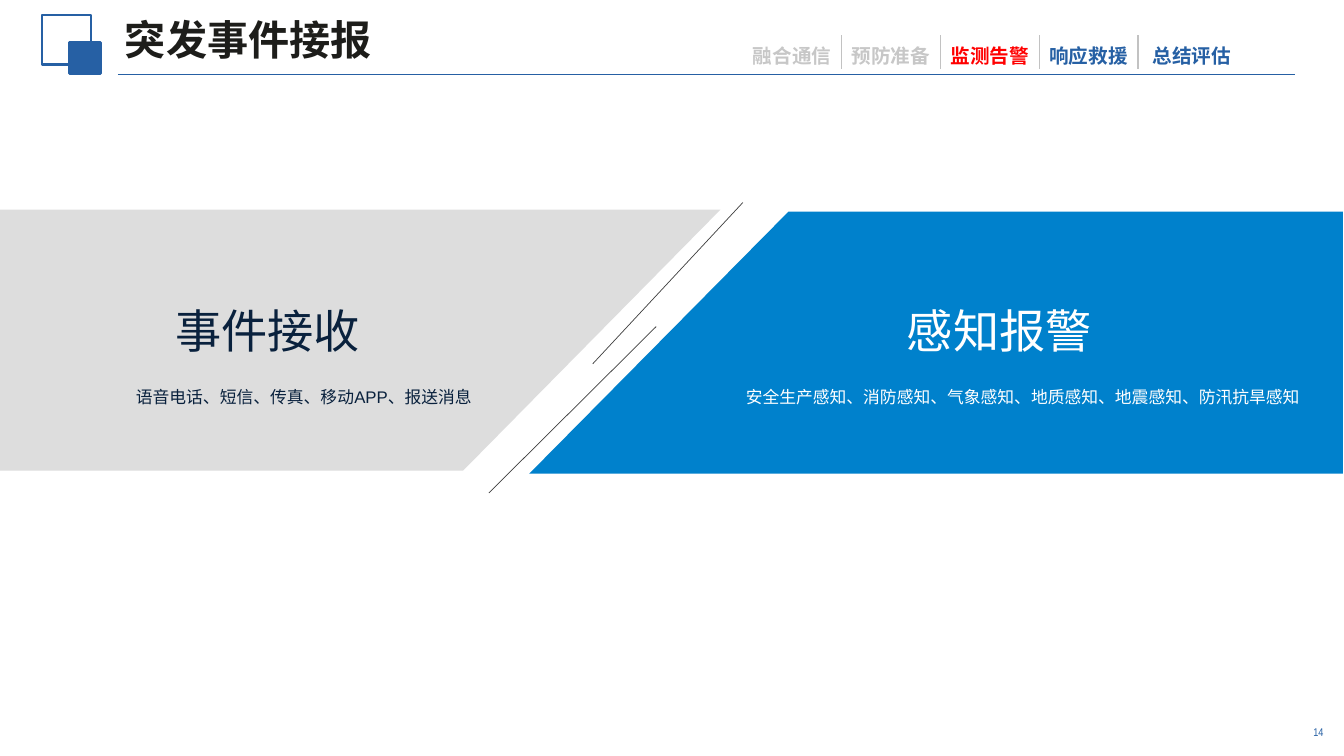
from lxml import etree
from pptx import Presentation
from pptx.dml.color import RGBColor
from pptx.enum import shapes, text
from pptx.oxml import ns
from pptx.util import Pt

BLUE = RGBColor(0x26, 0x60, 0xA4)
SKY = RGBColor(0x00, 0x81, 0xCC)
NAVY = RGBColor(0x09, 0x21, 0x3D)
INK = RGBColor(0x1D, 0x1D, 0x1A)
CHARCOAL = RGBColor(0x40, 0x40, 0x40)
RED = RGBColor(0xFF, 0x00, 0x00)
FADED = RGBColor(0xC7, 0xC7, 0xC7)
RULE = RGBColor(0xC2, 0xC2, 0xC2)
SILVER = RGBColor(0xDD, 0xDD, 0xDD)
WHITE = RGBColor(0xFF, 0xFF, 0xFF)
CJK = "Noto Sans CJK SC"

TITLE = "突发事件接报"
STAGES = [
    ("融合通信", FADED, 70.56),
    ("预防准备", FADED, 70.56),
    ("监测告警", RED, 70.56),
    ("响应救援", BLUE, 70.56),
    ("总结评估", BLUE, 77.04),
]
PANELS = [
    {
        "corners": [(563.2, 151.2), (959.2, 151.2), (959.2, 338.4), (378, 338.4)],
        "fill": SKY, "ink": WHITE,
        "heading": ("感知报警", 640.8),
        "caption": ("安全生产感知、消防感知、气象感知、地质感知、地震感知、防汛抗旱感知", 525.6, 416.9),
    },
    {
        "corners": [(-2.9, 149.8), (514.6, 149.8), (330.8, 336.2), (-2.9, 336.2)],
        "fill": SILVER, "ink": NAVY,
        "heading": ("事件接收", 118.1),
        "caption": ("语音电话、短信、传真、移动APP、报送消息", 90, 254.9),
    },
]
SLASHES = [(530.6, 144.7, 423.4, 259.9), (468.7, 233.3, 349.2, 352.1)]
SQUARES = [(30.24, 10.8, 34.56, 35.28, None, 1.5), (49.68, 30.24, 22.32, 22.32, BLUE, 2)]


def style(para, name, size, color, bold=False):
    font = para.font
    font.name, font.size, font.bold = name, Pt(size), bold
    font.color.rgb = color
    if name == CJK:
        props = para._p.pPr.find(ns.qn("a:defRPr"))
        etree.SubElement(props, ns.qn("a:ea"), typeface=name)


def add_text(page, words, left, top, width, height, name, size, color):
    box = page.shapes.add_textbox(Pt(left), Pt(top), Pt(width), Pt(height))
    box.text_frame.word_wrap = True
    para = box.text_frame.paragraphs[0]
    para.text = words
    style(para, name, size, color)
    return box


def add_line(page, x1, y1, x2, y2, color, weight):
    line = page.shapes.add_connector(
        shapes.MSO_CONNECTOR.STRAIGHT, Pt(x1), Pt(y1), Pt(x2), Pt(y2))
    line.line.color.rgb = color
    line.line.width = Pt(weight)
    etree.SubElement(line._element.spPr, ns.qn("a:effectLst"))


def set_borders(cell, left, right):
    props = cell._tc.get_or_add_tcPr()
    for side, color in (("L", left), ("R", right), ("T", None), ("B", None)):
        edge = etree.SubElement(props, ns.qn(f"a:ln{side}"), w=str(Pt(1)))
        if color is None:
            etree.SubElement(edge, ns.qn("a:noFill"))
        else:
            fill = etree.SubElement(edge, ns.qn("a:solidFill"))
            etree.SubElement(fill, ns.qn("a:srgbClr"), val=str(color))


def add_stages(page):
    total = sum(width for _, _, width in STAGES)
    table = page.shapes.add_table(
        1, len(STAGES), Pt(530.64), Pt(25.2), Pt(total), Pt(18.72)).table
    table.first_row = table.horz_banding = False
    last = len(STAGES) - 1
    for index, (label, color, width) in enumerate(STAGES):
        table.columns[index].width = Pt(width)
        cell = table.cell(0, index)
        set_borders(cell, RULE if index else None, RULE if index < last else None)
        cell.fill.background()
        cell.text = label
        para = cell.text_frame.paragraphs[0]
        para.alignment = text.PP_ALIGN.CENTER
        style(para, CJK, 14, color, True)


def add_header(page):
    number = add_text(page, "14", 877.7, 506.9, 128.2, 31.7, "Arial Narrow", 8, BLUE)
    number.text_frame.vertical_anchor = text.MSO_ANCHOR.MIDDLE
    number.text_frame.paragraphs[0].alignment = text.PP_ALIGN.CENTER
    add_line(page, 84.24, 53.28, 925.2, 53.28, BLUE, 1.25)
    for left, top, width, height, fill, weight in SQUARES:
        square = page.shapes.add_shape(
            shapes.MSO_SHAPE.RECTANGLE, Pt(left), Pt(top), Pt(width), Pt(height))
        square.shadow.inherit = False
        square.line.color.rgb = BLUE
        square.line.width = Pt(weight)
        if fill is None:
            square.fill.background()
        else:
            square.fill.solid()
            square.fill.fore_color.rgb = fill
    add_stages(page)

    title = page.shapes.title
    title.left, title.top, title.width, title.height = Pt(84.24), Pt(12.96), Pt(619.2), Pt(34.56)
    frame = title.text_frame
    frame.margin_left = frame.margin_right = Pt(5)
    frame.margin_top = frame.margin_bottom = Pt(2.5)
    frame.vertical_anchor = text.MSO_ANCHOR.MIDDLE
    frame.auto_size = text.MSO_AUTO_SIZE.NONE
    para = frame.paragraphs[0]
    para.text = TITLE
    para.alignment = text.PP_ALIGN.LEFT
    para.line_spacing = 0.9
    style(para, CJK, 29.4, INK, True)


def add_panels(page):
    for panel in PANELS:
        start, *rest = [(Pt(x), Pt(y)) for x, y in panel["corners"]]
        builder = page.shapes.build_freeform(*start)
        builder.add_line_segments(rest, close=True)
        band = builder.convert_to_shape()
        band.shadow.inherit = False
        band.fill.solid()
        band.fill.fore_color.rgb = panel["fill"]
        band.line.fill.background()
    for slash in SLASHES:
        add_line(page, *slash, CHARCOAL, 0.5)
    for panel in PANELS:
        words, left = panel["heading"]
        heading = add_text(page, words, left, 212.4, 149, 47.5, "Arial", 33, panel["ink"])
        words, left, width = panel["caption"]
        caption = add_text(page, words, left, 268.6, width, 24.5, "Arial", 12, panel["ink"])
        caption.text_frame.paragraphs[0].line_spacing = 1.3
        for box in (heading, caption):
            box.text_frame.auto_size = text.MSO_AUTO_SIZE.SHAPE_TO_FIT_TEXT


def main():
    deck = Presentation()
    deck.slide_width, deck.slide_height = Pt(960), Pt(540)
    page = deck.slides.add_slide(deck.slide_layouts[5])
    add_header(page)
    add_panels(page)
    deck.save("out.pptx")


if __name__ == "__main__":
    main()
